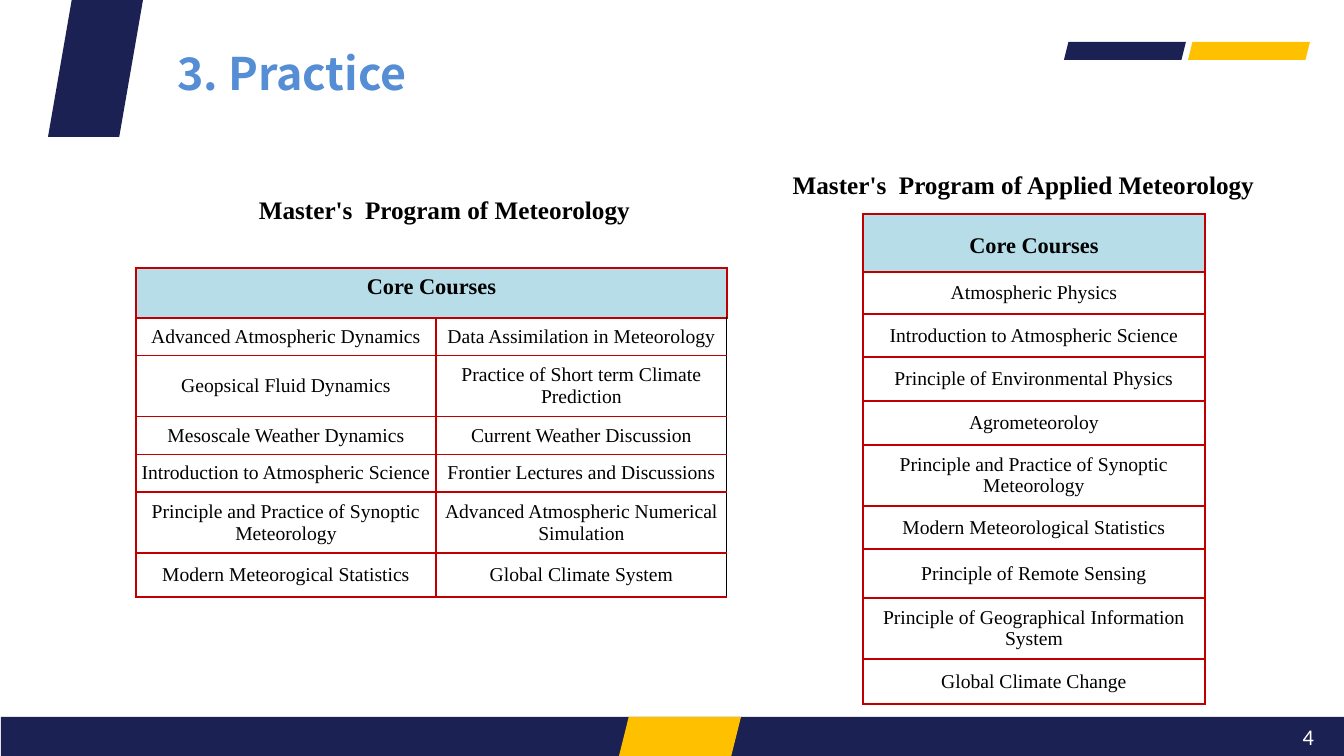
from lxml.etree import SubElement
from pptx import Presentation
from pptx.dml.color import RGBColor
from pptx.enum.shapes import MSO_SHAPE
from pptx.enum.text import MSO_ANCHOR, PP_ALIGN
from pptx.oxml.ns import qn
from pptx.util import Emu, Pt

NAVY = RGBColor(0x1B, 0x21, 0x53)
GOLD = RGBColor(0xFF, 0xC0, 0x00)
BLUE = RGBColor(0x55, 0x8E, 0xD5)
PALE = RGBColor(0xB7, 0xDE, 0xE8)
RED = RGBColor(0xC0, 0x00, 0x00)
BLACK = RGBColor(0x00, 0x00, 0x00)
WHITE = RGBColor(0xFF, 0xFF, 0xFF)
SERIF = "Times New Roman"

METEOROLOGY = [
    ("Advanced Atmospheric Dynamics", "Data Assimilation in Meteorology"),
    ("Geopsical Fluid Dynamics", "Practice of Short term Climate Prediction"),
    ("Mesoscale Weather Dynamics", "Current Weather Discussion"),
    ("Introduction to Atmospheric Science", "Frontier Lectures and Discussions"),
    ("Principle and Practice of Synoptic Meteorology",
     "Advanced Atmospheric Numerical Simulation"),
    ("Modern Meteorogical Statistics", "Global Climate System"),
]
APPLIED = [
    ("Atmospheric Physics",),
    ("Introduction to Atmospheric Science",),
    ("Principle of Environmental Physics",),
    ("Agrometeoroloy",),
    ("Principle and Practice of Synoptic Meteorology",),
    ("Modern Meteorological Statistics",),
    ("Principle of Remote Sensing",),
    ("Principle of Geographical Information System",),
    ("Global Climate Change",),
]


def px(n):
    return Emu(round(n * 914400 / 100.8))


def style(p, font, size, color, bold=False, align=PP_ALIGN.CENTER):
    p.alignment = align
    p.font.name, p.font.size, p.font.bold = font, Pt(size), bold
    p.font.color.rgb = color


def add_block(s, kind, box, color):
    sp = s.shapes.add_shape(kind, *map(px, box))
    sp.shadow.inherit = False
    sp.fill.solid()
    sp.fill.fore_color.rgb = color
    sp.line.fill.background()


def add_title(s, text, box):
    sp = s.shapes.title
    sp.left, sp.top, sp.width, sp.height = map(px, box)
    tf = sp.text_frame
    tf.text = text
    tf.vertical_anchor = MSO_ANCHOR.TOP
    tf.margin_left = tf.margin_right = px(13)
    tf.margin_top = tf.margin_bottom = px(7)
    style(tf.paragraphs[0], "Noto Sans CJK SC", 32, BLUE, True, PP_ALIGN.LEFT)


def add_text(s, text, box):
    tf = s.shapes.add_textbox(*map(px, box)).text_frame
    tf.word_wrap = True
    tf.text = text
    return tf


def add_caption(s, text, left, top):
    p = add_text(s, text, (left, top, 527, 40)).paragraphs[0]
    style(p, SERIF, 18, BLACK, True)
    pPr = p._p.get_or_add_pPr()
    pPr.set("marL", "0")
    pPr.set("indent", str(px(42)))


def set_borders(cell, right):
    tcPr = cell._tc.get_or_add_tcPr()
    red = (RED, 1.5)
    for side, (color, width) in zip("LRTB", (red, right, red, red)):
        ln = SubElement(tcPr, qn("a:ln" + side), w=str(Pt(width)))
        fill = SubElement(ln, qn("a:solidFill"))
        SubElement(fill, qn("a:srgbClr"), val=str(color))


def fill_cell(cell, text, header):
    cell.margin_left = cell.margin_right = 0
    cell.margin_top = cell.margin_bottom = px(7)
    cell.vertical_anchor = MSO_ANCHOR.TOP if header else MSO_ANCHOR.MIDDLE
    if header:
        cell.fill.solid()
        cell.fill.fore_color.rgb = PALE
    else:
        cell.fill.background()
    cell.text = text
    style(cell.text_frame.paragraphs[0], SERIF, 16 if header else 14, BLACK, header)


def add_courses(s, courses, left, top, widths, heights, edge=(RED, 1.5)):
    """Draw a course table; edge is the right border of the last body column."""
    cols = len(widths)
    rows = [("Core Courses",) + ("",) * (cols - 1)] + courses
    table = s.shapes.add_table(len(rows), cols, px(left), px(top),
                               px(sum(widths)), px(sum(heights))).table
    table.first_row = table.horz_banding = False
    for column, width in zip(table.columns, widths):
        column.width = px(width)
    for row, height in zip(table.rows, heights):
        row.height = px(height)
    for i, texts in enumerate(rows):
        for j, text in enumerate(texts):
            cell = table.cell(i, j)
            set_borders(cell, edge if i and j == cols - 1 else (RED, 1.5))
            fill_cell(cell, text, header=i == 0)
    if cols > 1:
        table.cell(0, 0).merge(table.cell(0, cols - 1))
    return table


def main():
    prs = Presentation()
    prs.slide_width, prs.slide_height = px(1344), px(756)
    s = prs.slides.add_slide(prs.slide_layouts[5])

    # Footer band, corner bars and title banner
    add_block(s, MSO_SHAPE.RECTANGLE, (1, 717, 1343, 39), NAVY)
    for box, color in [((619, 717, 122, 39), GOLD),
                       ((1188, 42, 122, 18), GOLD),
                       ((1064, 42, 122, 18), NAVY),
                       ((48, 0, 95, 137), NAVY)]:
        add_block(s, MSO_SHAPE.PARALLELOGRAM, box, color)

    # Title and page number
    add_title(s, "3. Practice", (164, 39, 880, 68))
    tf = add_text(s, "4", (1010, 717, 314, 40))
    tf.vertical_anchor = MSO_ANCHOR.MIDDLE
    style(tf.paragraphs[0], "Calibri", 16, WHITE, align=PP_ALIGN.RIGHT)

    # Meteorology programme
    add_courses(s, METEOROLOGY, 136, 268, (300, 291),
                (50, 37, 61, 38, 37, 61, 44), edge=(BLACK, 0.75))
    add_caption(s, "Master's  Program of Meteorology", 160, 189)

    # Applied meteorology programme
    table = add_courses(s, APPLIED, 863, 214, (342,),
                        (58, 42, 43, 44, 44, 61, 43, 49, 61, 45))
    table.cell(0, 0).text_frame.paragraphs[0].line_spacing = 1.5
    add_caption(s, "Master's  Program of Applied Meteorology", 739, 164)

    prs.save("out.pptx")


if __name__ == "__main__":
    main()
